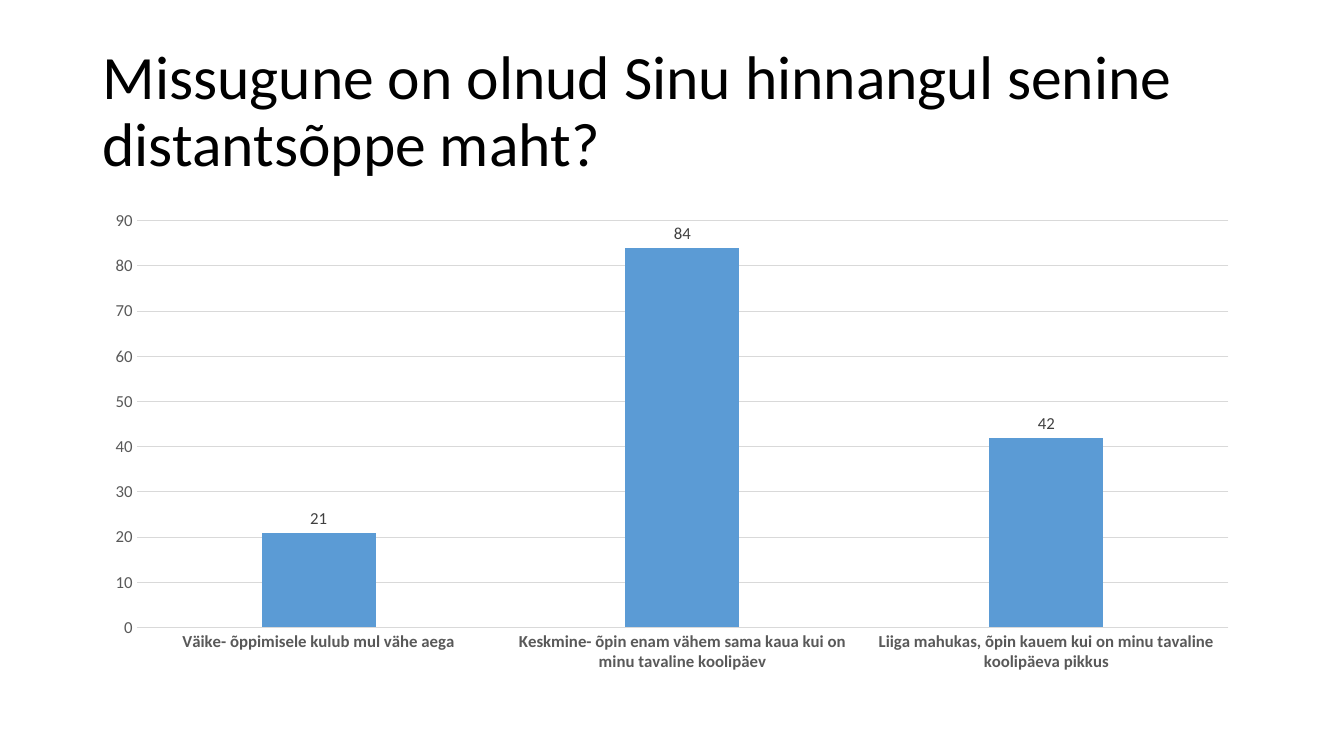
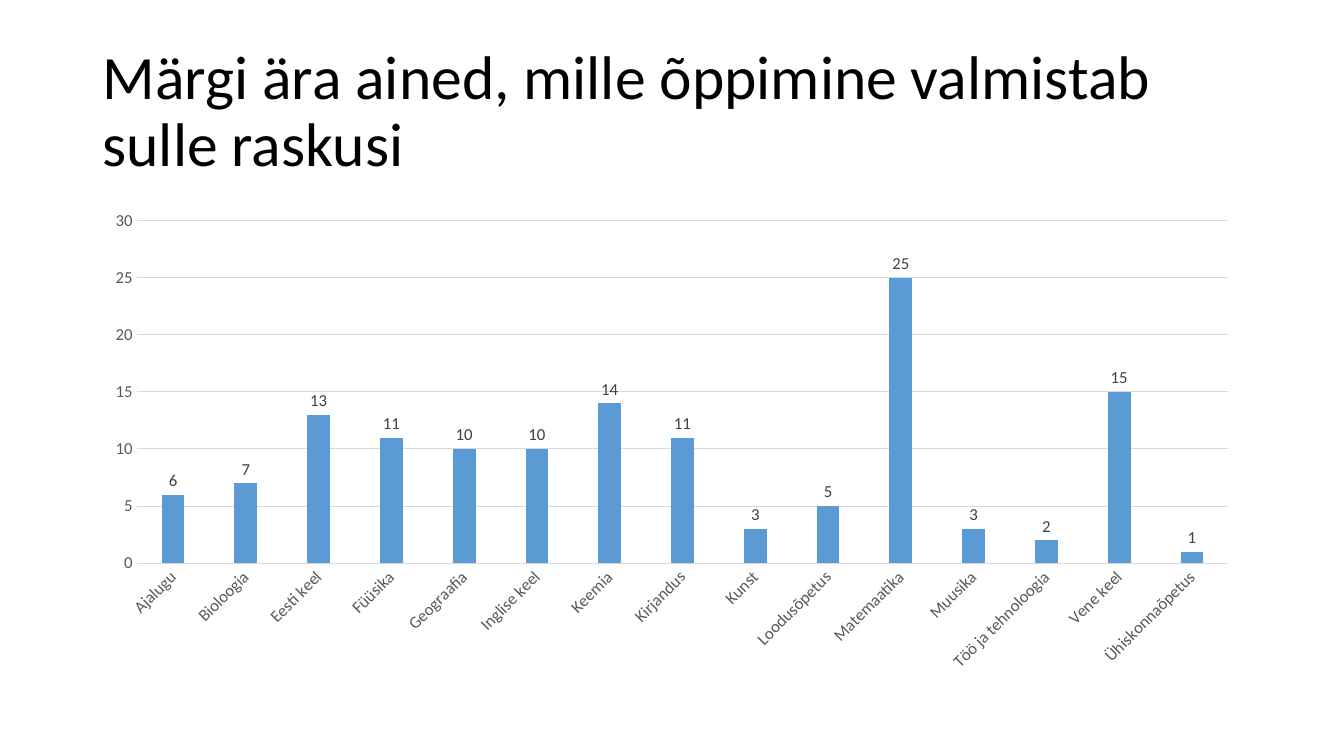
from pptx import Presentation
from pptx.chart import data
from pptx.dml.color import RGBColor
from pptx.enum import chart as ch, text
from pptx.util import Cm, Pt

BLACK = RGBColor(0x00, 0x00, 0x00)
AXIS_GREY = RGBColor(0x59, 0x59, 0x59)
LABEL_GREY = RGBColor(0x40, 0x40, 0x40)
LINE_GREY = RGBColor(0xD9, 0xD9, 0xD9)
BAR_BLUE = RGBColor(0x5B, 0x9B, 0xD5)
FONT = "Calibri"
LEFT, WIDTH = Cm(2.33), Cm(29.21)

questions = [
    {
        "title": "Missugune on olnud Sinu hinnangul senine distantsõppe maht?",
        "answers": {
            "Väike- õppimisele kulub mul vähe aega": 21,
            "Keskmine- õpin enam vähem sama kaua kui on minu tavaline koolipäev": 84,
            "Liiga mahukas, õpin kauem kui on minu tavaline koolipäeva pikkus": 42,
        },
        "top": 90, "step": 10, "bold": True, "degrees": 0,
    },
    {
        "title": "Märgi ära ained, mille õppimine valmistab sulle raskusi",
        "answers": {
            "Ajalugu": 6, "Bioloogia": 7, "Eesti keel": 13, "Füüsika": 11,
            "Geograafia": 10, "Inglise keel": 10, "Keemia": 14, "Kirjandus": 11,
            "Kunst": 3, "Loodusõpetus": 5, "Matemaatika": 25, "Muusika": 3,
            "Töö ja tehnoloogia": 2, "Vene keel": 15, "Ühiskonnaõpetus": 1,
        },
        "top": 30, "step": 5, "bold": False, "degrees": -45,
    },
]


def set_font(font, size, color, bold=False):
    font.name = FONT
    font.size = Pt(size)
    font.color.rgb = color
    font.bold = bold


def set_line(line):
    line.color.rgb = LINE_GREY
    line.width = Pt(0.75)


prs = Presentation()
prs.slide_width, prs.slide_height = Cm(33.87), Cm(19.05)

for question in questions:
    slide = prs.slides.add_slide(prs.slide_layouts[5])

    title = slide.shapes.title
    title.left, title.top, title.width, title.height = LEFT, Cm(1.01), WIDTH, Cm(3.68)
    title.text_frame.text = question["title"]
    title.text_frame.auto_size = text.MSO_AUTO_SIZE.NONE
    title.text_frame.vertical_anchor = text.MSO_ANCHOR.MIDDLE
    heading = title.text_frame.paragraphs[0]
    heading.alignment = text.PP_ALIGN.LEFT
    heading.line_spacing = 0.9
    set_font(heading.font, 44, BLACK)

    answers = data.CategoryChartData()
    answers.categories = list(question["answers"])
    answers.add_series("Series 1", list(question["answers"].values()))
    chart = slide.shapes.add_chart(
        ch.XL_CHART_TYPE.COLUMN_CLUSTERED, LEFT, Cm(5.07), WIDTH, Cm(12.09), answers
    ).chart
    chart.has_legend = False
    chart.has_title = False
    set_font(chart.font, 10, BLACK)

    columns = chart.plots[0]
    columns.gap_width = 219
    columns.overlap = -27
    columns.vary_by_categories = False
    bars = columns.series[0]
    bars.format.fill.solid()
    bars.format.fill.fore_color.rgb = BAR_BLUE
    columns.has_data_labels = True
    columns.data_labels.show_value = True
    columns.data_labels.position = ch.XL_LABEL_POSITION.OUTSIDE_END
    set_font(columns.data_labels.font, 12, LABEL_GREY)

    categories, counts = chart.category_axis, chart.value_axis
    for axis in (categories, counts):
        axis.major_tick_mark = axis.minor_tick_mark = ch.XL_TICK_MARK.NONE
    set_font(categories.tick_labels.font, 12, AXIS_GREY, question["bold"])
    set_font(counts.tick_labels.font, 12, AXIS_GREY)
    set_line(categories.format.line)
    label_body = categories._element.txPr.bodyPr
    label_body.set("rot", str(question["degrees"] * 60000))

    counts.minimum_scale = 0
    counts.maximum_scale = question["top"]
    counts.major_unit = question["step"]
    counts.format.line.fill.background()
    counts.has_major_gridlines = True
    set_line(counts.major_gridlines.format.line)

prs.save("out.pptx")
